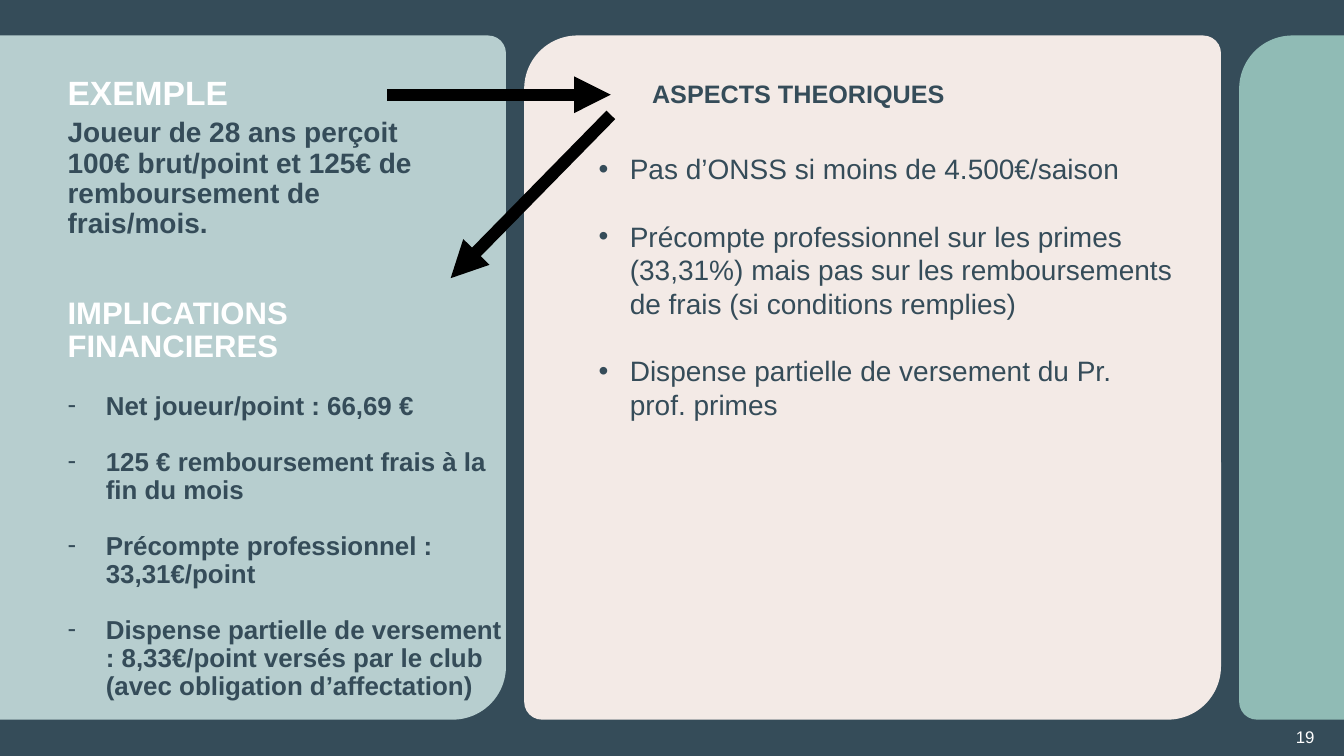
from dataclasses import dataclass
from typing import NamedTuple

from lxml.etree import SubElement
from pptx import Presentation
from pptx.dml.color import RGBColor
from pptx.enum.shapes import MSO_CONNECTOR as Connector, MSO_SHAPE as Shape
from pptx.enum.text import MSO_ANCHOR as Anchor, PP_ALIGN as Align
from pptx.oxml.ns import qn
from pptx.util import Inches, Pt


@dataclass(frozen=True)
class Theme:
    font: str = "Arial"
    slate: str = "354C59"
    mist: str = "B7CECF"
    sand: str = "F3EAE6"
    sage: str = "90BBB5"
    white: str = "FFFFFF"
    black: str = "000000"
    title: float = 24
    subtitle: float = 22.2
    body: float = 20
    item: float = 18.5
    label: float = 18
    number: float = 12
    arrow: float = 8.75


class Box(NamedTuple):
    """Left, top, width and height in percent of the slide's size."""
    left: float
    top: float
    width: float
    height: float

    def inner(self, dx, dy, width, height):
        return Box(self.left + dx, self.top + dy, width, height)


THEME = Theme()
SLIDE_W, SLIDE_H = Inches(13.333), Inches(7.5)
BIG_CORNER, SMALL_CORNER = 0.078, 0.026


def across(share):
    return int(SLIDE_W * share / 100)


def down(share):
    return int(SLIDE_H * share / 100)


def place(box):
    return across(box.left), down(box.top), across(box.width), down(box.height)


def style(paragraph, size, color, bold=False):
    font = paragraph.font if not paragraph.runs else paragraph.runs[0].font
    font.name, font.size, font.bold = THEME.font, Pt(size), bold
    font.color.rgb = RGBColor.from_string(color)


def add_bullet(paragraph, mark, indent):
    props = paragraph._p.get_or_add_pPr()
    props.set("marL", str(Inches(indent)))
    props.set("indent", str(-Inches(indent)))
    SubElement(props, qn("a:buFont")).set("typeface", THEME.font)
    SubElement(props, qn("a:buChar")).set("char", mark)


def add_text(slide, box, lines, size, color, bold=False, inset=0.0):
    frame = slide.shapes.add_textbox(*place(box)).text_frame
    frame.word_wrap = True
    frame.margin_left = frame.margin_right = Inches(inset)
    frame.margin_top = frame.margin_bottom = Inches(inset / 2)
    frame.text = "\n".join(lines)
    for paragraph in frame.paragraphs:
        style(paragraph, size, color, bold)
    return frame


def add_panel(slide, box, color):
    panel = slide.shapes.add_shape(Shape.ROUND_2_DIAG_RECTANGLE, *place(box))
    panel.adjustments[0], panel.adjustments[1] = BIG_CORNER, SMALL_CORNER
    panel.shadow.inherit = False
    panel.fill.solid()
    panel.fill.fore_color.rgb = RGBColor.from_string(color)
    panel.line.fill.background()


def add_arrow(slide, start, end):
    arrow = slide.shapes.add_connector(
        Connector.STRAIGHT, across(start[0]), down(start[1]), across(end[0]), down(end[1]))
    arrow.line.width = Pt(THEME.arrow)
    arrow.line.color.rgb = RGBColor.from_string(THEME.black)
    SubElement(arrow.line._get_or_add_ln(), qn("a:tailEnd")).set("type", "triangle")
    SubElement(arrow._element.spPr, qn("a:effectLst"))


def example_region(slide, box):
    add_panel(slide, box, THEME.mist)
    # Example
    heading = add_text(slide, box.inner(25.81, 5.41, 28.58, 5.33), ["EXEMPLE"],
                       THEME.title, THEME.white, bold=True)
    case = add_text(
        slide, box.inner(25.81, 11.01, 28.58, 18.53),
        ["Joueur de 28 ans perçoit 100€ brut/point et 125€ de remboursement de frais/mois."],
        THEME.body, THEME.slate, bold=True)
    # Financial implications
    implications = add_text(
        slide, box.inner(25.81, 34.61, 32.48, 52.67),
        ["IMPLICATIONS FINANCIERES",
         "Net joueur/point : 66,69 €",
         "125 € remboursement frais à la fin du mois",
         "Précompte professionnel : 33,31€/point",
         "Dispense partielle de versement : 8,33€/point versés par le club "
         "(avec obligation d’affectation)"],
        THEME.item, THEME.slate, bold=True)
    subtitle, *items = implications.paragraphs
    style(subtitle, THEME.subtitle, THEME.white, bold=True)
    for paragraph in (heading.paragraphs[0], case.paragraphs[0], subtitle):
        paragraph.line_spacing = 0.9
    for item in items:
        add_bullet(item, "-", 0.38)
        item.line_spacing = item.space_before = Pt(20)


def theory_region(slide, box):
    add_panel(slide, box, THEME.sand)
    add_text(slide, box.inner(8.78, 5.01, 41.85, 5.33), ["ASPECTS THEORIQUES"],
             THEME.label, THEME.slate, bold=True, inset=0.1)
    # Theoretical points
    points = add_text(
        slide, box.inner(4.8, 14.75, 44.4, 41.73),
        ["Pas d’ONSS si moins de 4.500€/saison",
         "Précompte professionnel sur les primes (33,31%) mais pas sur les "
         "remboursements de frais (si conditions remplies)",
         "Dispense partielle de versement du Pr. prof. primes"],
        THEME.body, THEME.slate, inset=0.1)
    for index, point in enumerate(points.paragraphs):
        add_bullet(point, "•", 0.31)
        if index:
            point.space_before = Pt(24)


def next_region(slide, box):
    add_panel(slide, box, THEME.sage)


def page_number(slide, box):
    number = add_text(slide, box, ["19"], THEME.number, THEME.white)
    number.vertical_anchor = Anchor.MIDDLE
    number.paragraphs[0].alignment = Align.RIGHT


def main():
    deck = Presentation()
    deck.slide_width, deck.slide_height = SLIDE_W, SLIDE_H
    slide = deck.slides.add_slide(deck.slide_layouts[6])
    slide.background.fill.solid()
    slide.background.fill.fore_color.rgb = RGBColor.from_string(THEME.slate)

    # Three panels in a row, the outer two bleeding over the edges
    left, gap = -20.78, 1.35
    regions = ((example_region, 58.43), (theory_region, 51.85), (next_region, 61.5))
    for draw_region, width in regions:
        draw_region(slide, Box(left, 4.7, width, 90.5))
        left += width + gap

    # Arrows from the example to the theory and back to the implications
    add_arrow(slide, (45.45, 15.2), (33.53, 36.8))
    add_arrow(slide, (28.8, 12.53), (45.45, 12.53))
    page_number(slide, Box(91.65, 96.13, 6.15, 2.67))
    deck.save("out.pptx")


if __name__ == "__main__":
    main()
